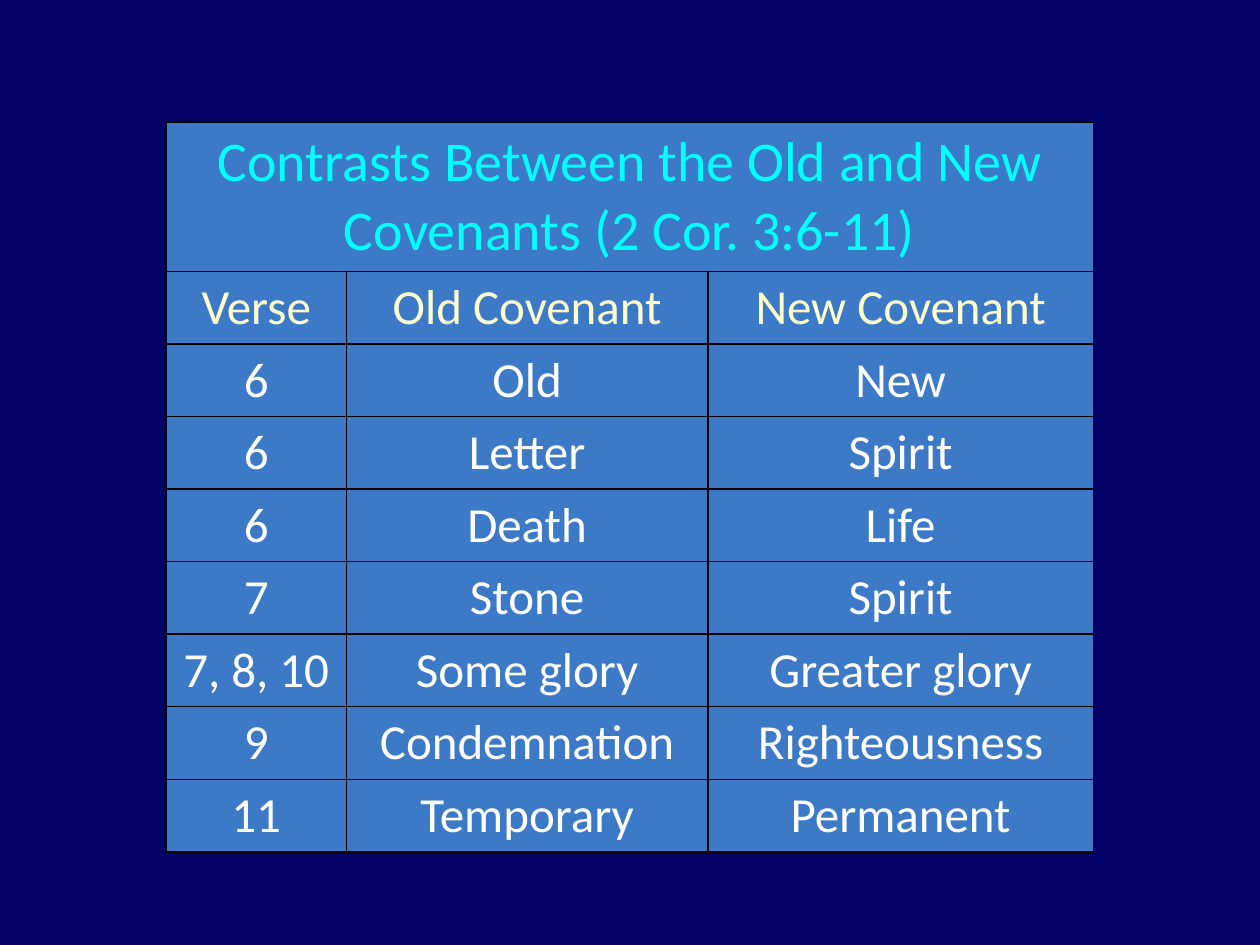
"""Build a slide with a table contrasting the Old and New Covenants."""
from dataclasses import dataclass

from lxml.etree import SubElement
from pptx import Presentation
from pptx.dml.color import RGBColor
from pptx.enum.text import PP_ALIGN
from pptx.oxml.ns import qn
from pptx.table import Table, _Cell
from pptx.util import Cm, Pt

NAVY = RGBColor(0x00, 0x00, 0x66)
BLUE = RGBColor(0x3C, 0x7A, 0xC7)
CYAN = RGBColor(0x00, 0xFF, 0xFF)
CREAM = RGBColor(0xFF, 0xFF, 0xCC)
WHITE = RGBColor(0xFF, 0xFF, 0xFF)
BLACK = RGBColor(0x00, 0x00, 0x00)
COL_WIDTHS = (3.63, 7.29, 7.77)
TITLE_HEIGHT, ROW_HEIGHT = 3.0, 1.46


@dataclass(frozen=True)
class Row:
    texts: tuple[str, ...]
    color: RGBColor = WHITE
    size: int = 28
    height: float = ROW_HEIGHT


ROWS = (
    Row(("Contrasts Between the Old and New Covenants (2 Cor. 3:6-11)",), CYAN, 32, TITLE_HEIGHT),
    Row(("Verse", "Old Covenant", "New Covenant"), CREAM),
    Row(("6", "Old", "New")),
    Row(("6", "Letter", "Spirit")),
    Row(("6", "Death", "Life")),
    Row(("7", "Stone", "Spirit")),
    Row(("7, 8, 10", "Some glory", "Greater glory")),
    Row(("9", "Condemnation", "Righteousness")),
    Row(("11", "Temporary", "Permanent")),
)


def style_cell(cell: _Cell) -> None:
    tc_pr = cell._tc.get_or_add_tcPr()
    for side in ("lnL", "lnR", "lnT", "lnB"):
        ln = SubElement(tc_pr, qn(f"a:{side}"), w=str(Pt(1)))
        fill = SubElement(ln, qn("a:solidFill"))
        SubElement(fill, qn("a:srgbClr"), val=str(BLACK))
    cell.fill.solid()
    cell.fill.fore_color.rgb = BLUE


def write_cell(cell: _Cell, text: str, row: Row) -> None:
    cell.text = text
    p = cell.text_frame.paragraphs[0]
    p.alignment = PP_ALIGN.CENTER
    p.font.name = "Calibri"
    p.font.size = Pt(row.size)
    p.font.bold = False
    p.font.color.rgb = row.color


def fill_table(table: Table) -> None:
    for column, width in zip(table.columns, COL_WIDTHS):
        column.width = Cm(width)
    for i, row in enumerate(ROWS):
        table.rows[i].height = Cm(row.height)
        for cell in table.rows[i].cells:
            style_cell(cell)
        for j, text in enumerate(row.texts):
            write_cell(table.cell(i, j), text, row)
    table.cell(0, 0).merge(table.cell(0, len(COL_WIDTHS) - 1))


def main() -> None:
    prs = Presentation()
    prs.slide_width, prs.slide_height = Cm(25.4), Cm(19.05)
    s = prs.slides.add_slide(prs.slide_layouts[6])
    s.background.fill.solid()
    s.background.fill.fore_color.rgb = NAVY
    height = sum(row.height for row in ROWS)
    frame = s.shapes.add_table(len(ROWS), len(COL_WIDTHS), Cm(3.35), Cm(2.46),
                               Cm(sum(COL_WIDTHS)), Cm(height))
    fill_table(frame.table)
    prs.save("out.pptx")


if __name__ == "__main__":
    main()
